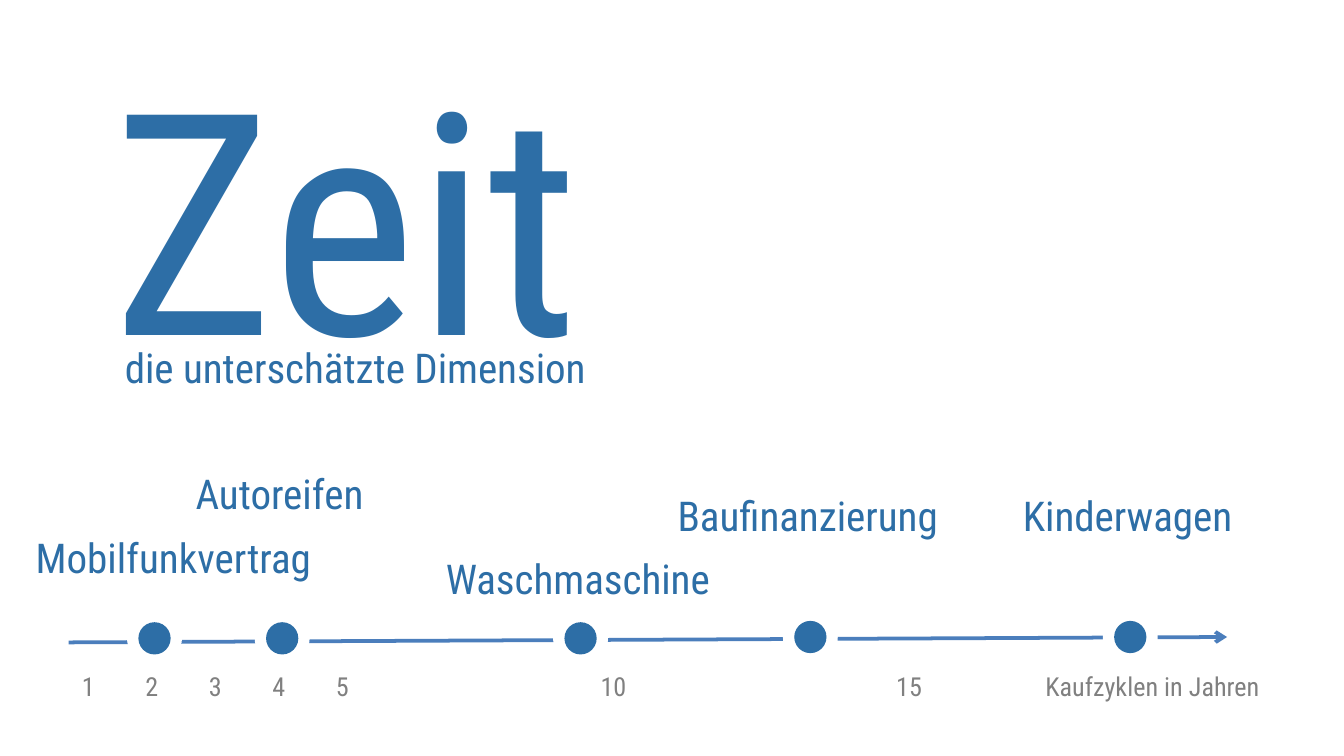
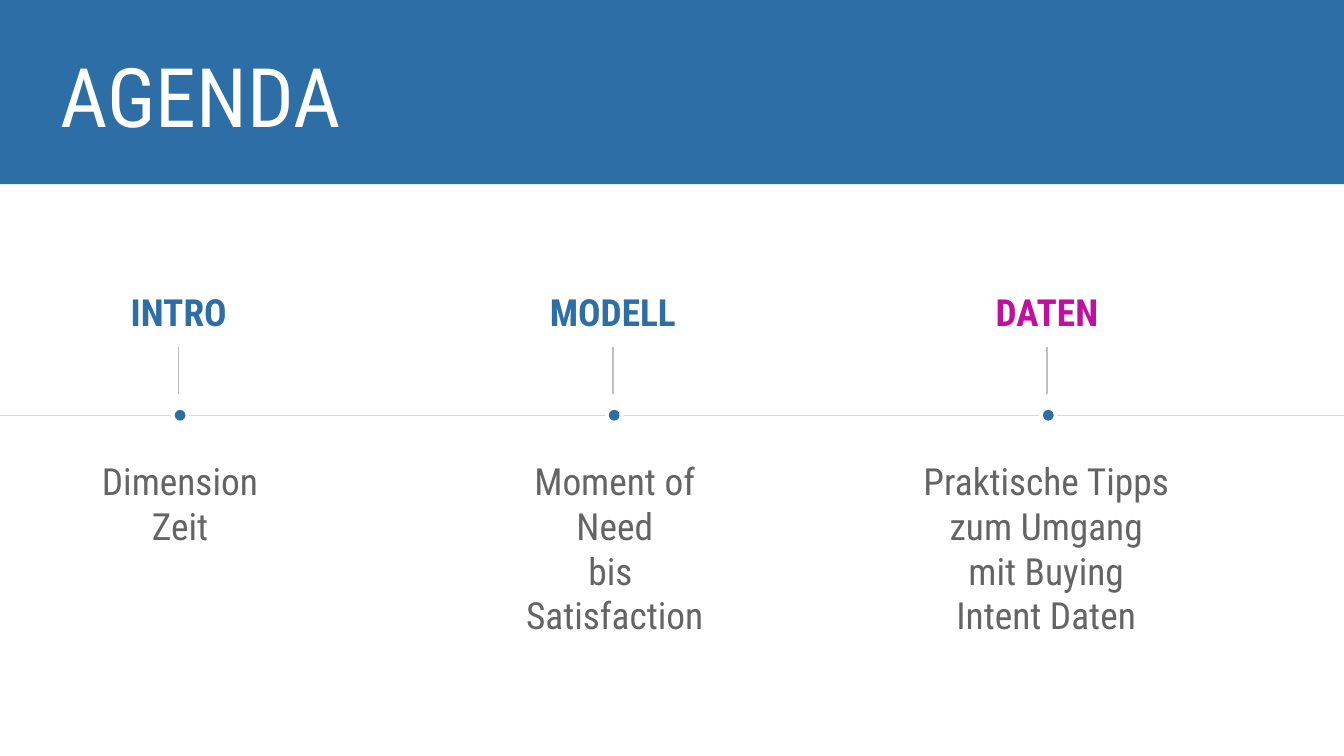
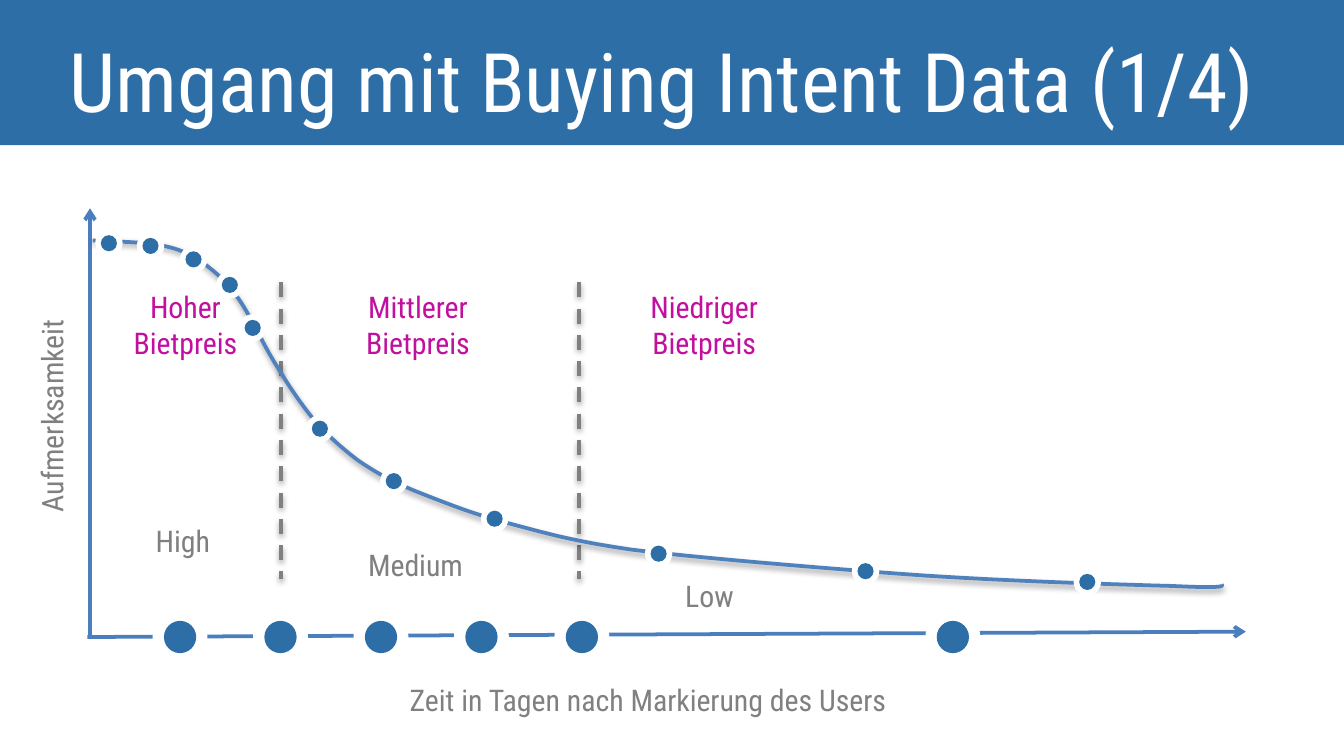
"""Build three slides on time as a dimension of buying intent."""
from dataclasses import dataclass
from typing import Optional

from lxml import etree
from pptx import Presentation
from pptx import util as u
from pptx.dml.color import RGBColor
from pptx.enum import dml, shapes, text
from pptx.oxml import ns

BLUE = RGBColor(0x2D, 0x6E, 0xA6)
AXIS_BLUE = RGBColor(0x4B, 0x7E, 0xBC)
CURVE_BLUE = RGBColor(0x4F, 0x81, 0xBD)
MAGENTA = RGBColor(0xC1, 0x10, 0x9F)
WHITE = RGBColor(0xFF, 0xFF, 0xFF)
BLACK = RGBColor(0, 0, 0)
GRAY = RGBColor(0x80, 0x80, 0x80)
DARK_GRAY = RGBColor(0x64, 0x64, 0x64)
STEM_GRAY = RGBColor(0xBF, 0xBF, 0xBF)
RULE_GRAY = RGBColor(0xD9, 0xD9, 0xD9)

FONT = "Roboto Condensed"
SLIDE_WIDTH = u.Inches(10)
SLIDE_HEIGHT = SLIDE_WIDTH * 9 // 16
BIG_DOT, CURVE_DOT, AGENDA_DOT = 0.24, 0.12, 0.08


@dataclass(frozen=True)
class Style:
    """Look of a text box."""

    size: float
    color: RGBColor
    centered: bool = False
    bold: bool = False
    space_after: float = 0


@dataclass(frozen=True)
class Shadow:
    """Outer shadow with lengths in points and shares in percent."""

    color: RGBColor
    alpha: int
    blur: float = 0
    distance: float = 0
    scale: int = 100


@dataclass(frozen=True)
class Label:
    """Text with its box in inches."""

    content: str
    left: float
    top: float
    width: float
    height: float


@dataclass(frozen=True)
class Topic:
    """One stop on the agenda line."""

    heading: str
    body: Label
    color: RGBColor = BLUE


HALO = Shadow(WHITE, 100, scale=170)
SOFT = Shadow(BLACK, 38, blur=3.1, distance=1.6)

HERO = Style(166, BLUE, centered=True, space_after=6)
SUBTITLE = Style(22, BLUE, space_after=6)
PRODUCT = Style(22, BLUE, centered=True, space_after=6)
TICK = Style(14, GRAY)
TITLE = Style(44, WHITE)
BODY = Style(20, DARK_GRAY, centered=True)
CAPTION = Style(16, GRAY)
PRICE = Style(16, MAGENTA, centered=True)

PRODUCTS = [
    Label(name, left, top, 2.34, 0.63)
    for name, left, top in (
        ("Mobilfunkvertrag", 0.12, 3.91),
        ("Autoreifen", 0.91, 3.44),
        ("Waschmaschine", 3.13, 4.07),
        ("Baufinanzierung", 4.84, 3.6),
        ("Kinderwagen", 7.22, 3.6),
    )
]
PRODUCT_DOTS = [(1.15, 4.75), (2.1, 4.75), (4.32, 4.75), (6.03, 4.74), (8.41, 4.74)]
TICKS = [
    Label(str(year), 0.51 + 1.89 * (year - 1) / 4, 4.94, 0.39, 0.34) for year in range(1, 6)
] + [
    Label("10", 4.37, 4.94, 0.55, 0.34),
    Label("15", 6.57, 4.94, 0.55, 0.34),
    Label("Kaufzyklen in Jahren", 7.68, 4.94, 1.89, 0.34),
]

TOPICS = [
    Topic("INTRO", Label("Dimension Zeit", 0.51, 3.36, 1.66, 0.77)),
    Topic("MODELL", Label("Moment of Need\vbis \nSatisfaction", 3.56, 3.36, 2.03, 1.11)),
    Topic(
        "DATEN",
        Label("Praktische Tipps zum Umgang mit Buying Intent Daten", 6.76, 3.36, 2.05, 1.45),
        MAGENTA,
    ),
]

ATTENTION_LEVELS = [
    Label("Zeit in Tagen nach Markierung des Users", 2.95, 5.02, 4.02, 0.37),
    Label("High", 1.06, 3.84, 0.71, 0.37),
    Label("Medium", 2.64, 4.02, 1.18, 0.37),
    Label("Low", 5, 4.25, 0.71, 0.37),
]
PRICES = [
    Label("Hoher Bietpreis", 0.83, 2.1, 1.1, 0.64),
    Label("Mittlerer\nBietpreis", 2.56, 2.1, 1.1, 0.64),
    Label("Niedriger Bietpreis", 4.69, 2.1, 1.1, 0.64),
]
CURVE_START = (0.69, 1.79)
CURVE_SEGMENTS = [
    ((0.89, 1.8), (1.08, 1.8), (1.22, 1.83)),
    ((1.36, 1.86), (1.43, 1.9), (1.53, 1.97)),
    ((1.62, 2.04), (1.69, 2.1), (1.78, 2.23)),
    ((1.87, 2.36), (1.97, 2.59), (2.07, 2.74)),
    ((2.16, 2.89), (2.25, 3.02), (2.35, 3.14)),
    ((2.45, 3.25), (2.55, 3.34), (2.67, 3.43)),
    ((2.79, 3.51), (2.89, 3.57), (3.08, 3.65)),
    ((3.26, 3.72), (3.5, 3.82), (3.77, 3.89)),
    ((4.04, 3.96), (4.22, 4.02), (4.7, 4.09)),
    ((5.19, 4.15), (6.03, 4.22), (6.7, 4.27)),
    ((7.36, 4.32), (8.32, 4.35), (8.72, 4.36)),
    ((9.12, 4.38), (9.1, 4.36), (9.09, 4.35)),
]
CURVE_DOTS = [
    (0.81, 1.81), (1.12, 1.83), (1.44, 1.93), (1.71, 2.12), (1.88, 2.44), (2.38, 3.19),
    (2.93, 3.58), (3.68, 3.86), (4.9, 4.12), (6.44, 4.25), (8.09, 4.33),
]


def set_shadow(shape, shadow: Optional[Shadow] = None) -> None:
    """Replace the theme shadow by the given one, or by none."""
    effects = etree.SubElement(shape._element.spPr, ns.qn("a:effectLst"))
    if shadow is None:
        return
    outer = etree.SubElement(
        effects,
        ns.qn("a:outerShdw"),
        blurRad=str(u.Pt(shadow.blur)),
        dist=str(u.Pt(shadow.distance)),
        dir="5400000",
        sx=str(shadow.scale * 1000),
        sy=str(shadow.scale * 1000),
        algn="ctr",
        rotWithShape="0",
    )
    color = etree.SubElement(outer, ns.qn("a:srgbClr"), val=str(shadow.color))
    etree.SubElement(color, ns.qn("a:alpha"), val=str(shadow.alpha * 1000))


def add_label(slide, label: Label, style: Style, rotation: float = 0) -> None:
    """Add a wrapped text box in one style."""
    box = slide.shapes.add_textbox(
        u.Inches(label.left), u.Inches(label.top), u.Inches(label.width), u.Inches(label.height)
    )
    box.rotation = rotation
    frame = box.text_frame
    frame.word_wrap = True
    frame.text = label.content
    for paragraph in frame.paragraphs:
        paragraph.alignment = text.PP_ALIGN.CENTER if style.centered else text.PP_ALIGN.LEFT
        paragraph.space_after = u.Pt(style.space_after)
        paragraph.font.name = FONT
        paragraph.font.size = u.Pt(style.size)
        paragraph.font.bold = style.bold
        paragraph.font.color.rgb = style.color


def add_filled(slide, kind, left: float, top: float, width: float, height: float,
               shadow: Optional[Shadow] = None) -> None:
    """Add a blue shape without outline."""
    shape = slide.shapes.add_shape(
        kind, u.Inches(left), u.Inches(top), u.Inches(width), u.Inches(height)
    )
    shape.fill.solid()
    shape.fill.fore_color.rgb = BLUE
    shape.line.fill.background()
    set_shadow(shape, shadow)


def add_dot(slide, x: float, y: float, size: float) -> None:
    """Add a dot with a white halo around its centre."""
    oval = shapes.MSO_SHAPE.OVAL
    add_filled(slide, oval, x - size / 2, y - size / 2, size, size, HALO)


def add_line(slide, start: tuple, end: tuple, color: RGBColor, width: float = 2,
             arrow: bool = False, dashed: bool = False,
             shadow: Optional[Shadow] = None) -> None:
    """Add a straight line, with an arrowhead or dashes on request."""
    line = slide.shapes.add_connector(
        shapes.MSO_CONNECTOR.STRAIGHT, *(u.Inches(value) for value in (*start, *end))
    )
    line.line.color.rgb = color
    line.line.width = u.Pt(width)
    if dashed:
        line.line.dash_style = dml.MSO_LINE.DASH
    if arrow:
        etree.SubElement(line.line._get_or_add_ln(), ns.qn("a:tailEnd"), type="arrow")
    set_shadow(line, shadow)


def add_header(slide, title: Label, band_top: float, band_height: float) -> None:
    """Add the blue band and the title on it."""
    add_filled(slide, shapes.MSO_SHAPE.RECTANGLE, 0, band_top, 10, band_height)
    add_label(slide, title, TITLE)


def bezier_points(start: tuple, segments: list, steps: int = 10) -> list:
    """Return points along a chain of cubic curves."""
    points = []
    for first, second, end in segments:
        for step in range(1, steps + 1):
            t = step / steps
            weights = ((1 - t) ** 3, 3 * t * (1 - t) ** 2, 3 * t * t * (1 - t), t ** 3)
            corners = (start, first, second, end)
            points.append(tuple(
                u.Inches(sum(weight * corner[axis] for weight, corner in zip(weights, corners)))
                for axis in (0, 1)
            ))
        start = end
    return points


def add_curve(slide) -> None:
    """Add the falling attention curve."""
    builder = slide.shapes.build_freeform(*(u.Inches(value) for value in CURVE_START))
    builder.add_line_segments(bezier_points(CURVE_START, CURVE_SEGMENTS), close=False)
    curve = builder.convert_to_shape()
    curve.fill.background()
    curve.line.color.rgb = CURVE_BLUE
    curve.line.width = u.Pt(2)
    set_shadow(curve, SOFT)


def build_time(slide) -> None:
    """Build the opening slide with the purchase cycles."""
    add_label(slide, Label("Zeit", 0.51, 0.14, 4.13, 3.31), HERO)
    add_label(slide, Label("die unterschätzte Dimension", 0.83, 2.5, 3.82, 0.63), SUBTITLE)
    add_line(slide, (0.51, 4.78), (9.13, 4.74), AXIS_BLUE, arrow=True)
    for tick in TICKS:
        add_label(slide, tick, TICK)
    for product, (x, y) in zip(PRODUCTS, PRODUCT_DOTS):
        add_label(slide, product, PRODUCT)
        add_dot(slide, x, y, BIG_DOT)


def build_agenda(slide) -> None:
    """Build the agenda line with its three topics."""
    add_header(slide, Label("AGENDA", 0.35, 0.29, 9.41, 0.86), -0.02, 1.39)
    add_line(slide, (0, 3.09), (10, 3.09), RULE_GRAY, 0.75)
    for index, topic in enumerate(TOPICS):
        center = 1.34 + 3.23 * index
        heading = Label(topic.heading, center - 1, 2.1, 1.98, 0.44)
        add_label(slide, heading, Style(20, topic.color, centered=True, bold=True))
        add_line(slide, (center - 0.01, 2.93), (center - 0.01, 2.58), STEM_GRAY, 0.75)
        add_dot(slide, center, 3.09, AGENDA_DOT)
        add_label(slide, topic.body, BODY)


def build_intent(slide) -> None:
    """Build the attention curve with its price zones."""
    title = Label("Umgang mit Buying Intent Data (1/4)", 0.42, 0.18, 9.57, 0.86)
    add_header(slide, title, 0, 1.08)
    add_line(slide, (0.65, 4.74), (9.27, 4.7), AXIS_BLUE, arrow=True)
    for x in [1.34 + 2.99 * day / 4 for day in range(5)] + [7.09]:
        add_dot(slide, x, 4.74, BIG_DOT)
    add_line(slide, (0.67, 4.74), (0.67, 1.55), AXIS_BLUE, arrow=True)
    add_label(slide, Label("Aufmerksamkeit", -0.48, 2.86, 1.73, 0.37), CAPTION, rotation=270)
    for level in ATTENTION_LEVELS:
        add_label(slide, level, CAPTION)
    for x in (2.09, 4.31):
        add_line(slide, (x, 2.1), (x, 4.31), GRAY, dashed=True, shadow=SOFT)
    for price in PRICES:
        add_label(slide, price, PRICE)
    add_curve(slide)
    for x, y in CURVE_DOTS:
        add_dot(slide, x, y, CURVE_DOT)


def main() -> None:
    """Build and save the presentation."""
    presentation = Presentation()
    presentation.slide_width = SLIDE_WIDTH
    presentation.slide_height = SLIDE_HEIGHT
    blank = presentation.slide_layouts[6]
    for build in (build_time, build_agenda, build_intent):
        build(presentation.slides.add_slide(blank))
    presentation.save("out.pptx")


if __name__ == "__main__":
    main()
